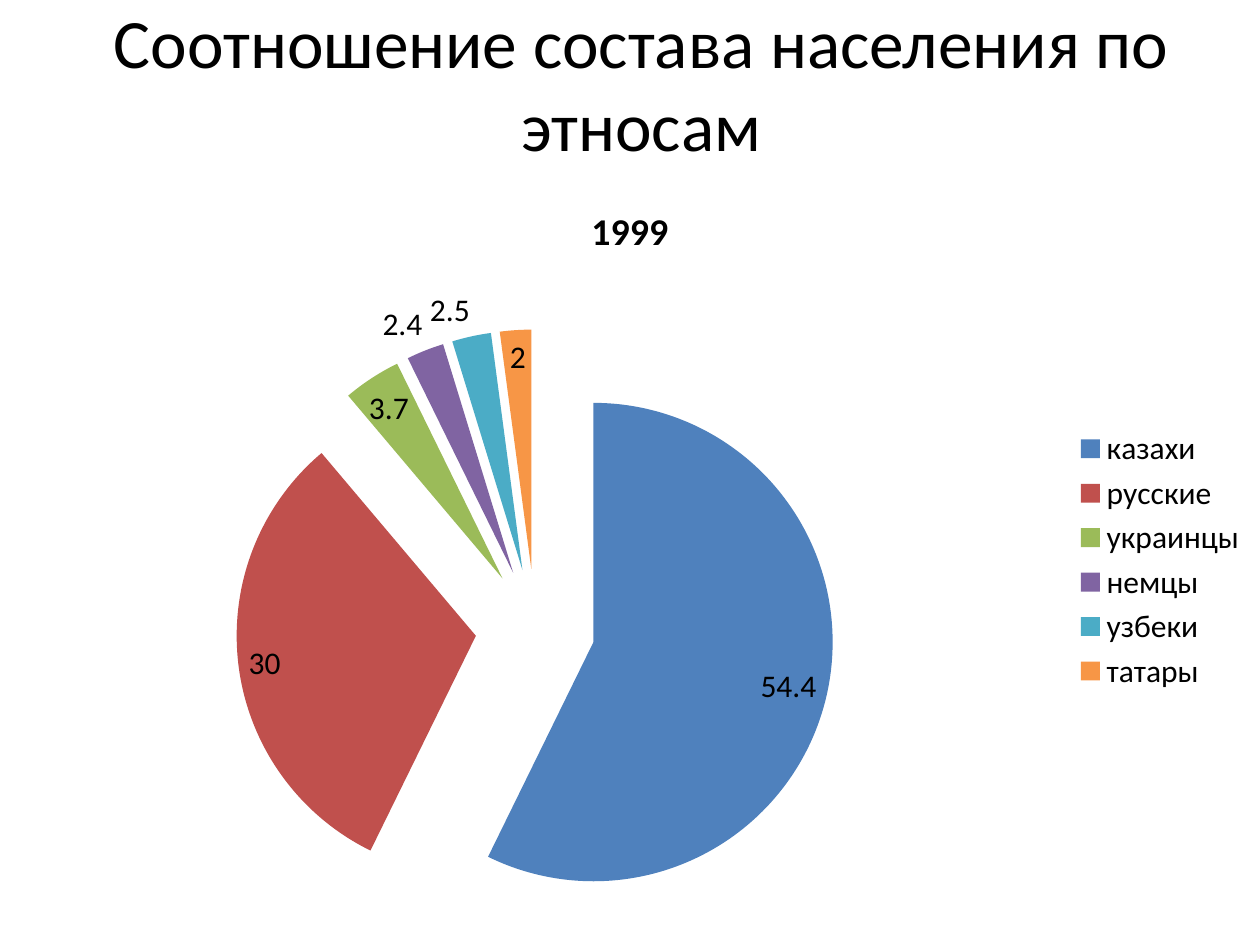
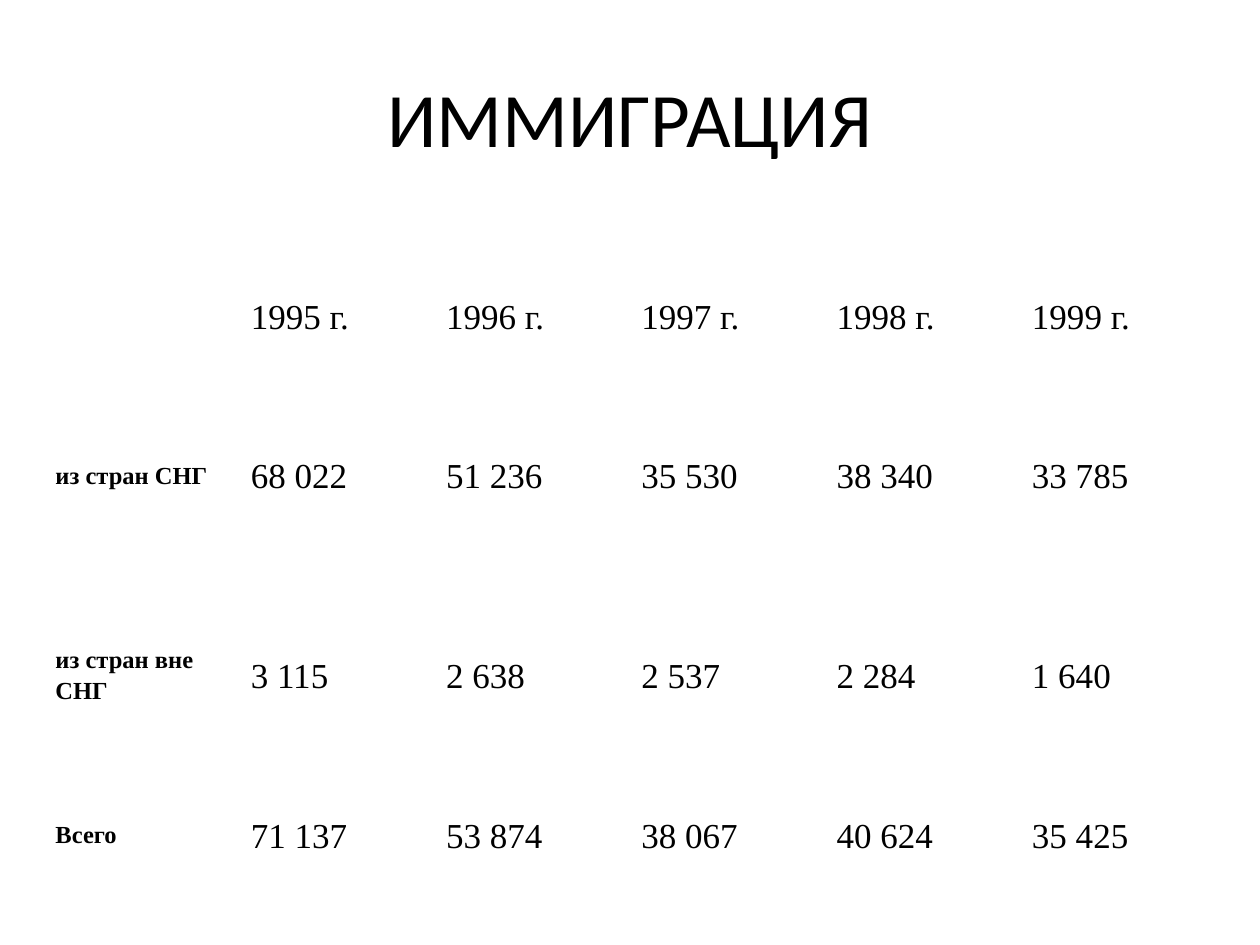
"""Build two slides on the ethnic make-up of the population and on immigration."""
from dataclasses import dataclass

from lxml.etree import Element
from pptx import Presentation
from pptx.chart.data import CategoryChartData as ChartData
from pptx.dml.color import RGBColor as RGB
from pptx.enum.chart import XL_CHART_TYPE as CT, XL_LABEL_POSITION as LP, XL_LEGEND_POSITION as LEG
from pptx.enum.text import MSO_ANCHOR as ANCHOR, MSO_AUTO_SIZE as AUTO, PP_ALIGN as ALIGN
from pptx.oxml.ns import qn
from pptx.util import Inches, Pt


@dataclass(frozen=True)
class Theme:
    head_font: str = "Calibri"
    table_font: str = "Times New Roman"
    ink: str = "000000"
    paper: str = "FFFFFF"
    slices: tuple = ("4F81BD", "C0504D", "9BBB59", "8064A2", "4BACC6", "F79646")
    title: float = 44
    long_title: float = 39.6
    chart_title: float = 21.6
    chart_text: float = 18
    row_label: float = 14
    cell: float = 20


def put(obj, values):
    for name, value in values.items():
        setattr(obj, name, value)


class Deck:
    def __init__(self, theme):
        self.theme = theme
        self.prs = Presentation()
        put(self.prs, {"slide_width": Inches(10), "slide_height": Inches(7.5)})
        self.s = None

    def box(self, x, y, w, h):
        sw, sh = self.prs.slide_width, self.prs.slide_height
        return [int(v) for v in (x * sw, y * sh, w * sw, h * sh)]

    def font(self, font, name, size, bold=False):
        put(font, {"name": name, "size": Pt(size), "bold": bold})
        font.color.rgb = RGB.from_string(self.theme.ink)

    def slide(self, title, x, y, size):
        self.s = self.prs.slides.add_slide(self.prs.slide_layouts[5])
        bg = self.s.background.fill
        bg.solid()
        bg.fore_color.rgb = RGB.from_string(self.theme.paper)
        sp = self.s.shapes.title
        put(sp, dict(zip(("left", "top", "width", "height"), self.box(x, y, 0.9, 1 / 6))))
        tf = sp.text_frame
        tf.text = title
        put(tf, {"word_wrap": True, "auto_size": AUTO.NONE, "vertical_anchor": ANCHOR.MIDDLE})
        p = tf.paragraphs[0]
        p.alignment = ALIGN.CENTER
        self.font(p.runs[0].font, self.theme.head_font, size)

    def pie(self, name, shares, box, explosion):
        t = self.theme
        data = ChartData()
        data.categories = list(shares)
        data.add_series(name, list(shares.values()))
        chart = self.s.shapes.add_chart(CT.PIE, *self.box(*box), data).chart
        self.font(chart.font, t.head_font, t.chart_text)
        put(chart, {"has_title": True, "has_legend": True})
        put(chart.legend, {"position": LEG.RIGHT, "include_in_layout": False})
        tf = chart.chart_title.text_frame
        tf.text = name
        self.font(tf.paragraphs[0].runs[0].font, t.head_font, t.chart_title, True)
        plot = chart.plots[0]
        put(plot, {"vary_by_categories": True, "has_data_labels": True})
        put(plot.data_labels, {"show_value": True, "show_percentage": False,
                               "position": LP.BEST_FIT})
        series = plot.series[0]
        for i, color in enumerate(t.slices):
            fill = series.points[i].format.fill
            fill.solid()
            fill.fore_color.rgb = RGB.from_string(color)
        first = series._element.find(qn("c:dPt"))
        first.addprevious(Element(qn("c:explosion"), val=str(explosion)))

    def table(self, rows, heights, box):
        t = self.theme
        table = self.s.shapes.add_table(len(rows), len(rows[0]), *self.box(*box)).table
        put(table, {"first_row": False, "horz_banding": False})
        for r, (row, height) in enumerate(zip(rows, heights)):
            table.rows[r].height = Inches(height)
            for c, text in enumerate(row):
                cell = table.cell(r, c)
                cell.fill.background()
                put(cell, {"vertical_anchor": ANCHOR.MIDDLE})
                put(cell, dict.fromkeys(("margin_left", "margin_top", "margin_right",
                                         "margin_bottom"), Inches(0.05)))
                if text:
                    cell.text = text
                    p = cell.text_frame.paragraphs[0]
                    put(p, {"line_spacing": 1.15, "space_after": Pt(10)})
                    size = t.cell if c else t.row_label
                    self.font(p.runs[0].font, t.table_font, size, c == 0)


def main():
    theme = Theme()
    deck = Deck(theme)

    deck.slide("Соотношение состава населения по этносам", 0.059, 0.004, theme.long_title)
    shares = {"казахи": 54.4, "русские": 30, "украинцы": 3.7,
              "немцы": 2.4, "узбеки": 2.5, "татары": 2}
    deck.pie("1999", shares, (0, 0.185, 1, 0.815), 25)

    deck.slide("ИММИГРАЦИЯ", 0.05, 0.04, theme.title)
    rows = [
        [""] + [f"{year} г." for year in range(1995, 2000)],
        ["из стран СНГ", "68 022", "51 236", "35 530", "38 340", "33 785"],
        ["из стран вне СНГ", "3 115", "2 638", "2 537", "2 284", "1 640"],
        ["Всего", "71 137", "53 874", "38 067", "40 624", "35 425"],
    ]
    deck.table(rows, (0.94, 1.59, 1.59, 0.94), (0.039, 0.27, 0.93, 0.68))

    deck.prs.save("out.pptx")


if __name__ == "__main__":
    main()
